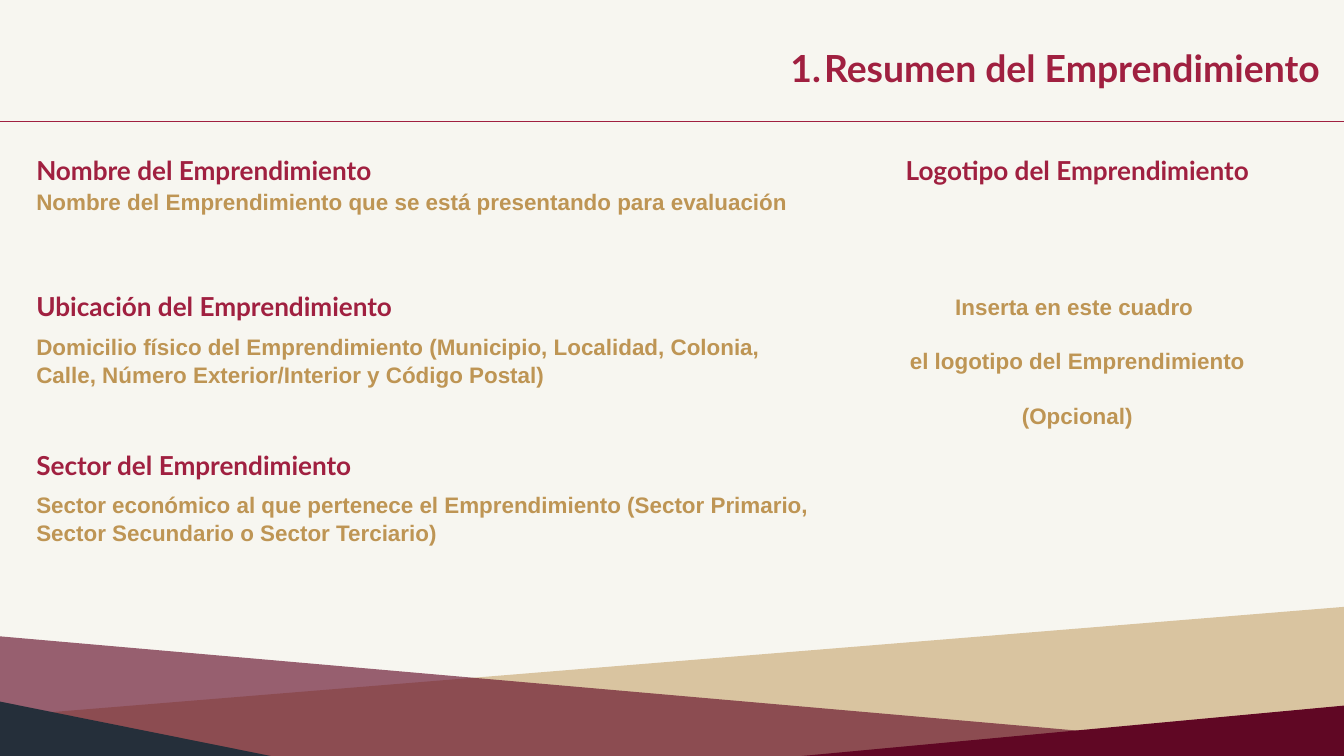
from dataclasses import dataclass

import pptx
import pptx.dml.color
import pptx.enum.shapes
import pptx.enum.text
import pptx.oxml.ns
import pptx.shapes.base
import pptx.slide
import pptx.text.text
import pptx.util
from lxml import etree

Pt = pptx.util.Pt
RGBColor = pptx.dml.color.RGBColor
Align = pptx.enum.text.PP_ALIGN
qn = pptx.oxml.ns.qn

CREAM = RGBColor(0xF7, 0xF6, 0xF0)
CRIMSON = RGBColor(0xA0, 0x20, 0x40)
GOLD = RGBColor(0xBE, 0x95, 0x54)
BURGUNDY = RGBColor(0x60, 0x07, 0x24)
NAVY = RGBColor(0x25, 0x2F, 0x3A)

WIDTH, HEIGHT = 1440, 810
LEFT = 38.9
TITLE_INDENT = 36
RULE_TOP = 130.3


@dataclass(frozen=True)
class Style:
    font: str
    size: float
    color: RGBColor
    line_spacing: float
    top_inset: float


@dataclass(frozen=True)
class Box:
    left: float
    top: float
    width: float
    height: float


@dataclass(frozen=True)
class Section:
    heading: str
    description: str
    heading_top: float
    description_top: float
    description_height: float


@dataclass(frozen=True)
class Band:
    corners: tuple[tuple[float, float], ...]
    color: RGBColor
    opacity: int


TITLE = Style("Lato", 40, CRIMSON, 1.0, 1.4)
HEADING = Style("Lato", 28, CRIMSON, 1.0, 1.4)
DESCRIPTION = Style("Arial", 24, GOLD, 1.05, 0.7)
LOGO_HINT = Style("Arial", 24, GOLD, 1.05, 58.7)

SECTIONS = (
    Section(
        "Nombre del Emprendimiento",
        "Nombre del Emprendimiento que se está presentando para evaluación",
        164.2, 199.4, 30.2,
    ),
    Section(
        "Ubicación del Emprendimiento",
        "Domicilio físico del Emprendimiento (Municipio, Localidad, Colonia, "
        "Calle, Número Exterior/Interior y Código Postal)",
        309.6, 355, 59,
    ),
    Section(
        "Sector del Emprendimiento",
        "Sector económico al que pertenece el Emprendimiento (Sector Primario, "
        "Sector Secundario o Sector Terciario)",
        480.2, 524.2, 59,
    ),
)

LOGO_LINES = (
    "Inserta en este cuadro ",
    "el logotipo del Emprendimiento",
    "(Opcional)",
)

BANDS = (
    Band(
        ((WIDTH, 800.6), (1329, HEIGHT), (0, HEIGHT), (0, 767.5), (WIDTH, 650.2)),
        GOLD, 51,
    ),
    Band(((859, HEIGHT), (WIDTH, 756), (WIDTH, HEIGHT)), BURGUNDY, 100),
    Band(
        ((231, HEIGHT), (0, 789.8), (0, 681.8), (WIDTH, 807.8), (WIDTH, HEIGHT)),
        BURGUNDY, 63,
    ),
    Band(((0, HEIGHT), (0, 751.7), (290.2, HEIGHT)), NAVY, 100),
)


def draw_band(slide: pptx.slide.Slide, band: Band) -> None:
    start, *rest = [(Pt(x), Pt(y)) for x, y in band.corners]
    builder = slide.shapes.build_freeform(*start)
    builder.add_line_segments(rest, close=True)
    shape = builder.convert_to_shape()
    shape.shadow.inherit = False
    shape.line.fill.background()
    shape.fill.solid()
    shape.fill.fore_color.rgb = band.color
    if band.opacity < 100:
        color = shape.element.xpath("./p:spPr/a:solidFill/a:srgbClr")[0]
        etree.SubElement(color, qn("a:alpha"), val=str(band.opacity * 1000))


def draw_rule(slide: pptx.slide.Slide) -> None:
    rule = slide.shapes.add_connector(
        pptx.enum.shapes.MSO_CONNECTOR.STRAIGHT,
        Pt(0), Pt(RULE_TOP), Pt(WIDTH), Pt(RULE_TOP),
    )
    rule.line.color.rgb = CRIMSON
    rule.line.width = Pt(1)
    etree.SubElement(rule.element.spPr, qn("a:effectLst"))


def write_lines(
    shape: pptx.shapes.base.BaseShape,
    lines: tuple[str, ...],
    style: Style,
    alignment: Align,
) -> None:
    frame = shape.text_frame
    frame.word_wrap = True
    frame.auto_size = pptx.enum.text.MSO_AUTO_SIZE.NONE
    frame.vertical_anchor = pptx.enum.text.MSO_ANCHOR.TOP
    frame.margin_left = frame.margin_right = frame.margin_bottom = Pt(0)
    frame.margin_top = Pt(style.top_inset)
    for index, line in enumerate(lines):
        paragraph = frame.add_paragraph() if index else frame.paragraphs[0]
        paragraph.alignment = alignment
        paragraph.line_spacing = style.line_spacing
        paragraph.space_before = Pt(28.7 if index else 0)
        run = paragraph.add_run()
        run.text = line
        run.font.name = style.font
        run.font.size = Pt(style.size)
        run.font.bold = True
        run.font.color.rgb = style.color


def add_text(
    slide: pptx.slide.Slide,
    box: Box,
    lines: tuple[str, ...],
    style: Style,
    alignment: Align = Align.LEFT,
) -> None:
    shape = slide.shapes.add_textbox(
        Pt(box.left), Pt(box.top), Pt(box.width), Pt(box.height)
    )
    write_lines(shape, lines, style, alignment)


def number_paragraph(paragraph: pptx.text.text._Paragraph) -> None:
    properties = paragraph._p.get_or_add_pPr()
    properties.set("marL", str(Pt(TITLE_INDENT)))
    properties.set("indent", str(-Pt(TITLE_INDENT)))
    bullet_color = etree.SubElement(properties, qn("a:buClr"))
    etree.SubElement(bullet_color, qn("a:srgbClr"), val=str(CRIMSON))
    etree.SubElement(properties, qn("a:buAutoNum"), type="arabicPeriod")


def fill_title(slide: pptx.slide.Slide) -> None:
    title = slide.shapes.title
    title.left, title.top = Pt(638), Pt(46.8)
    title.width, title.height = Pt(776), Pt(49.7)
    write_lines(title, ("Resumen del Emprendimiento",), TITLE, Align.RIGHT)
    number_paragraph(title.text_frame.paragraphs[0])


def main() -> None:
    presentation = pptx.Presentation()
    presentation.slide_width, presentation.slide_height = Pt(WIDTH), Pt(HEIGHT)
    slide = presentation.slides.add_slide(presentation.slide_layouts[5])
    slide.background.fill.solid()
    slide.background.fill.fore_color.rgb = CREAM

    for band in BANDS:
        draw_band(slide, band)
    draw_rule(slide)
    fill_title(slide)

    for section in SECTIONS:
        heading_box = Box(LEFT, section.heading_top, 449.3, 35.3)
        description_box = Box(
            LEFT, section.description_top, 829.4, section.description_height
        )
        add_text(slide, heading_box, (section.heading,), HEADING)
        add_text(slide, description_box, (section.description,), DESCRIPTION)

    logo_heading_box = Box(929.5, SECTIONS[0].heading_top, 449.3, 35.3)
    add_text(
        slide, logo_heading_box, ("Logotipo del Emprendimiento",), HEADING, Align.CENTER
    )
    add_text(slide, Box(906.5, 253.4, 495.4, 262.8), LOGO_LINES, LOGO_HINT, Align.CENTER)
    presentation.save("out.pptx")


if __name__ == "__main__":
    main()
